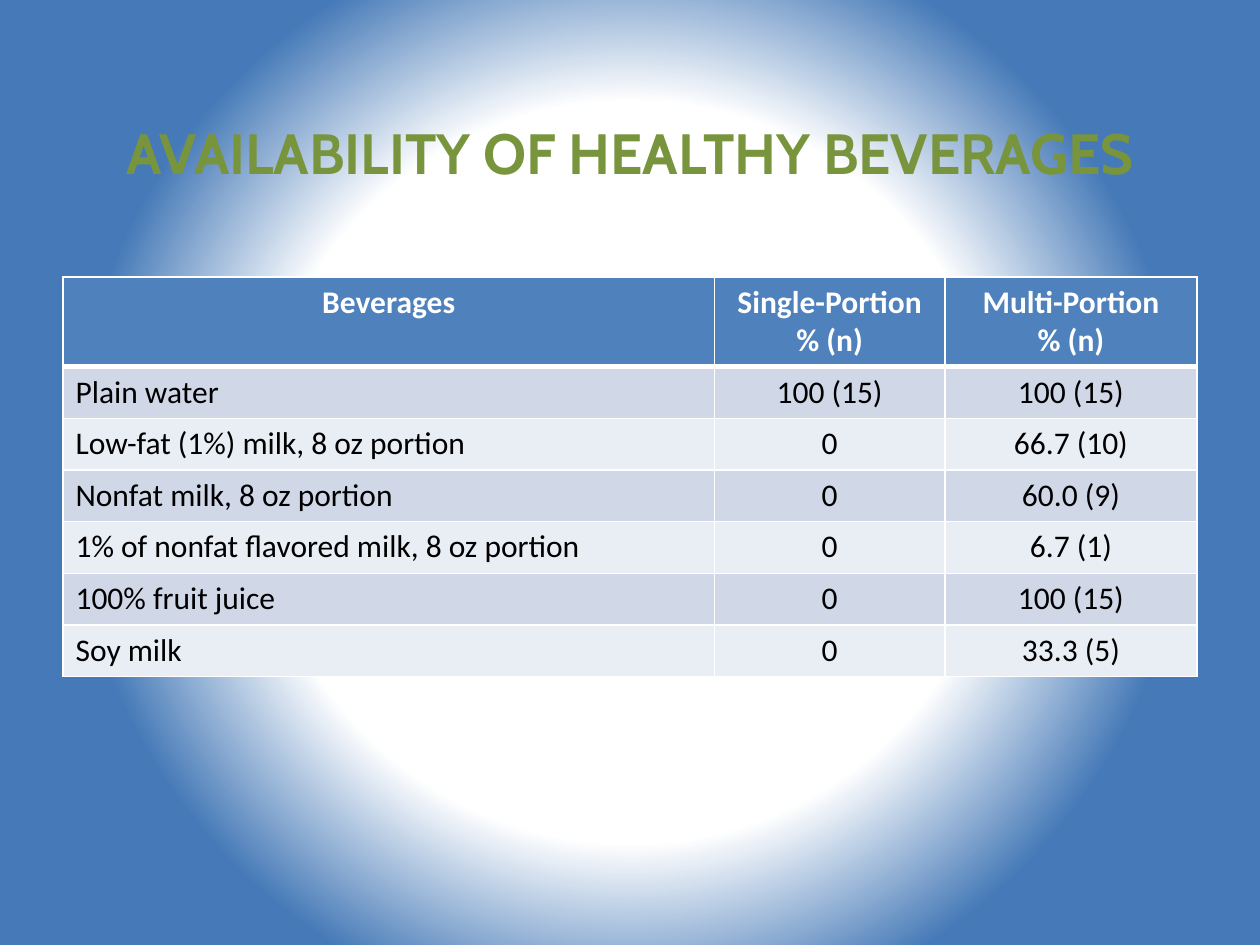
import pptx
import pptx.util
import pptx.oxml
import pptx.oxml.ns
import pptx.dml.color
import pptx.enum.text

Inches = pptx.util.Inches
ALIGN = pptx.enum.text.PP_ALIGN
ANCHOR = pptx.enum.text.MSO_ANCHOR

COLORS = {
    "white": "FFFFFF",
    "black": "000000",
    "backdrop": "4579B7",
    "title": "78953D",
    "header": "4F81BD",
    "odd row": "D0D8E8",
    "even row": "E9EDF4",
}
FORMATS = {
    "title": {"name": "Cabin", "size": pptx.util.Pt(32.4), "bold": True},
    "header": {"name": "Calibri", "size": pptx.util.Pt(18), "bold": True},
    "body": {"name": "Calibri", "size": pptx.util.Pt(18), "bold": False},
}
COLUMN_WIDTHS = [5.17, 1.83, 2]
HEADER_HEIGHT, ROW_HEIGHT = 0.7, 0.41
BEVERAGES = [
    ("Beverages", "Single-Portion\n% (n)", "Multi-Portion\n% (n)"),
    ("Plain water", "100 (15)", "100 (15)"),
    ("Low-fat (1%) milk, 8 oz portion", "0", "66.7 (10)"),
    ("Nonfat milk, 8 oz portion", "0", "60.0 (9)"),
    ("1% of nonfat flavored milk, 8 oz portion", "0", "6.7 (1)"),
    ("100% fruit juice", "0", "100 (15)"),
    ("Soy milk", "0", "33.3 (5)"),
]


class SlideBuilder:
    def __init__(self, presentation):
        title_only = presentation.slide_layouts[5]
        self.slide = presentation.slides.add_slide(title_only)

    def fill_text(self, text_frame, text, style, color, alignment):
        text_frame.text = text
        for paragraph in text_frame.paragraphs:
            paragraph.alignment = alignment
            for run in paragraph.runs:
                for name, value in FORMATS[style].items():
                    setattr(run.font, name, value)
                run.font.color.rgb = pptx.dml.color.RGBColor.from_string(COLORS[color])

    def radial_background(self, inner, outer):
        """Fill the slide from its centre; inner and outer are (percent, colour)."""
        self.slide.background.fill.solid()
        stops = "".join(
            f'<a:gs pos="{percent * 1000}"><a:srgbClr val="{COLORS[color]}"/></a:gs>'
            for percent, color in (inner, outer))
        gradient = pptx.oxml.parse_xml(
            f'<a:gradFill {pptx.oxml.ns.nsdecls("a")} rotWithShape="1">'
            f'<a:gsLst>{stops}</a:gsLst><a:path path="circle">'
            '<a:fillToRect l="50000" t="50000" r="50000" b="50000"/>'
            '</a:path></a:gradFill>')
        solid = self.slide.element.xpath("p:cSld/p:bg/p:bgPr/a:solidFill")[0]
        solid.getparent().replace(solid, gradient)

    def title(self, text, left, top, width, height):
        shape = self.slide.shapes.title
        shape.left, shape.top = Inches(left), Inches(top)
        shape.width, shape.height = Inches(width), Inches(height)
        shape.text_frame.vertical_anchor = ANCHOR.MIDDLE
        self.fill_text(shape.text_frame, text, "title", "title", ALIGN.CENTER)

    def borders(self, cell, widths):
        """Draw white cell edges; widths maps an edge letter to points."""
        properties = cell._tc.get_or_add_tcPr()
        for index, (edge, points) in enumerate(widths.items()):
            properties.insert(index, pptx.oxml.parse_xml(
                f'<a:ln{edge} {pptx.oxml.ns.nsdecls("a")} w="{points * 12700}">'
                f'<a:solidFill><a:srgbClr val="{COLORS["white"]}"/></a:solidFill>'
                f'</a:ln{edge}>'))

    def table(self, rows, left, top):
        heights = [HEADER_HEIGHT] + [ROW_HEIGHT] * (len(rows) - 1)
        table = self.slide.shapes.add_table(
            len(rows), len(COLUMN_WIDTHS), Inches(left), Inches(top),
            Inches(sum(COLUMN_WIDTHS)), Inches(sum(heights))).table
        for column, width in zip(table.columns, COLUMN_WIDTHS):
            column.width = Inches(width)
        for row_index, (values, height) in enumerate(zip(rows, heights)):
            table.rows[row_index].height = Inches(height)
            is_header = row_index == 0
            style, color = ("header", "white") if is_header else ("body", "black")
            fill = "header" if is_header else ("even row", "odd row")[row_index % 2]
            edges = {"L": 1, "R": 1, "T": 3 if row_index == 1 else 1,
                     "B": 3 if is_header else 1}
            for column_index, text in enumerate(values):
                cell = table.cell(row_index, column_index)
                centered = is_header or column_index > 0
                self.fill_text(cell.text_frame, text, style, color,
                               ALIGN.CENTER if centered else ALIGN.LEFT)
                cell.fill.solid()
                cell.fill.fore_color.rgb = pptx.dml.color.RGBColor.from_string(COLORS[fill])
                self.borders(cell, edges)


def main():
    presentation = pptx.Presentation()
    presentation.slide_width, presentation.slide_height = Inches(10), Inches(7.5)
    builder = SlideBuilder(presentation)
    builder.radial_background((47, "white"), (71, "backdrop"))
    builder.title("AVAILABILITY OF HEALTHY BEVERAGES", 0.5, 0.58, 9, 1.25)
    builder.table(BEVERAGES, 0.5, 2.2)
    presentation.save("out.pptx")


if __name__ == "__main__":
    main()
